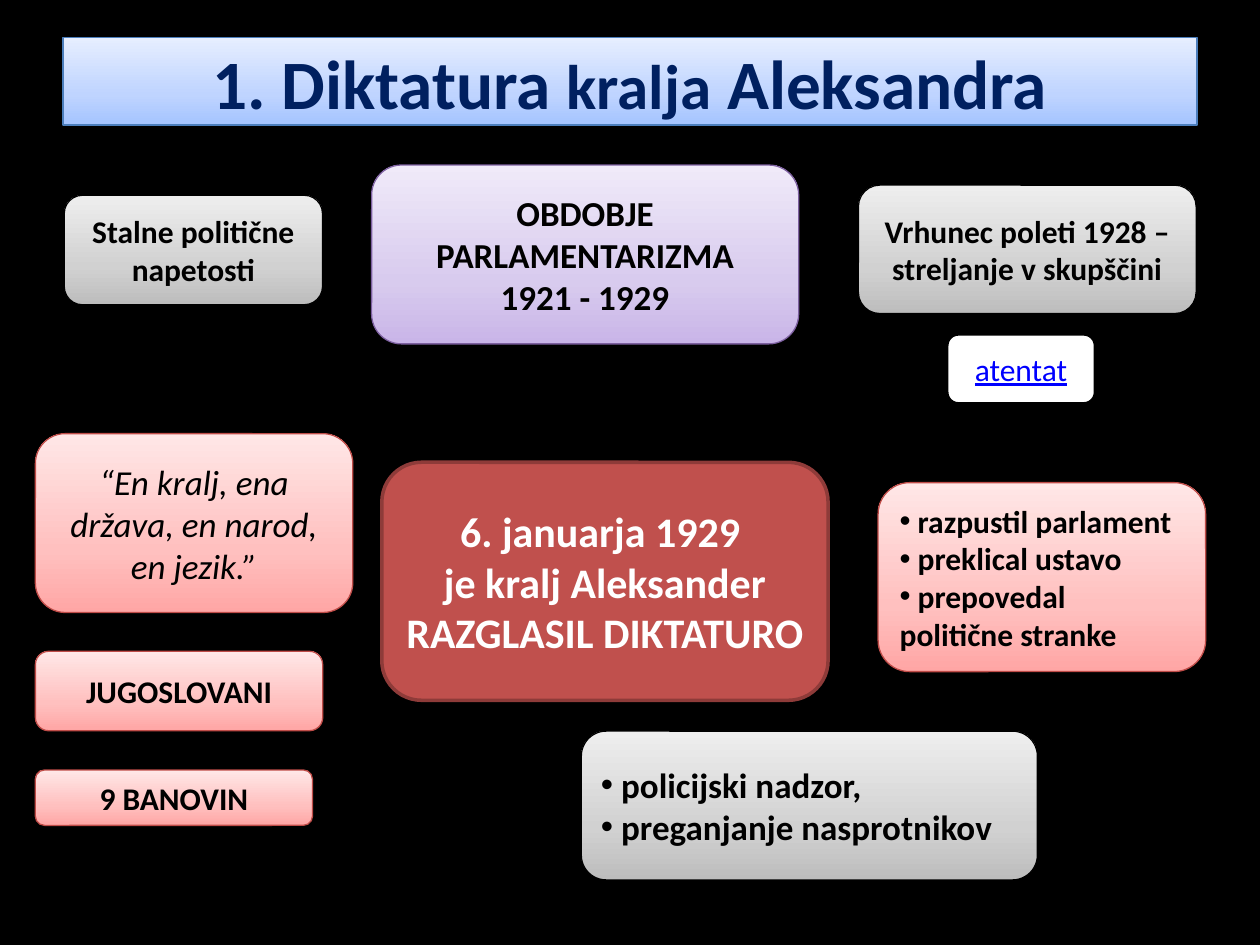
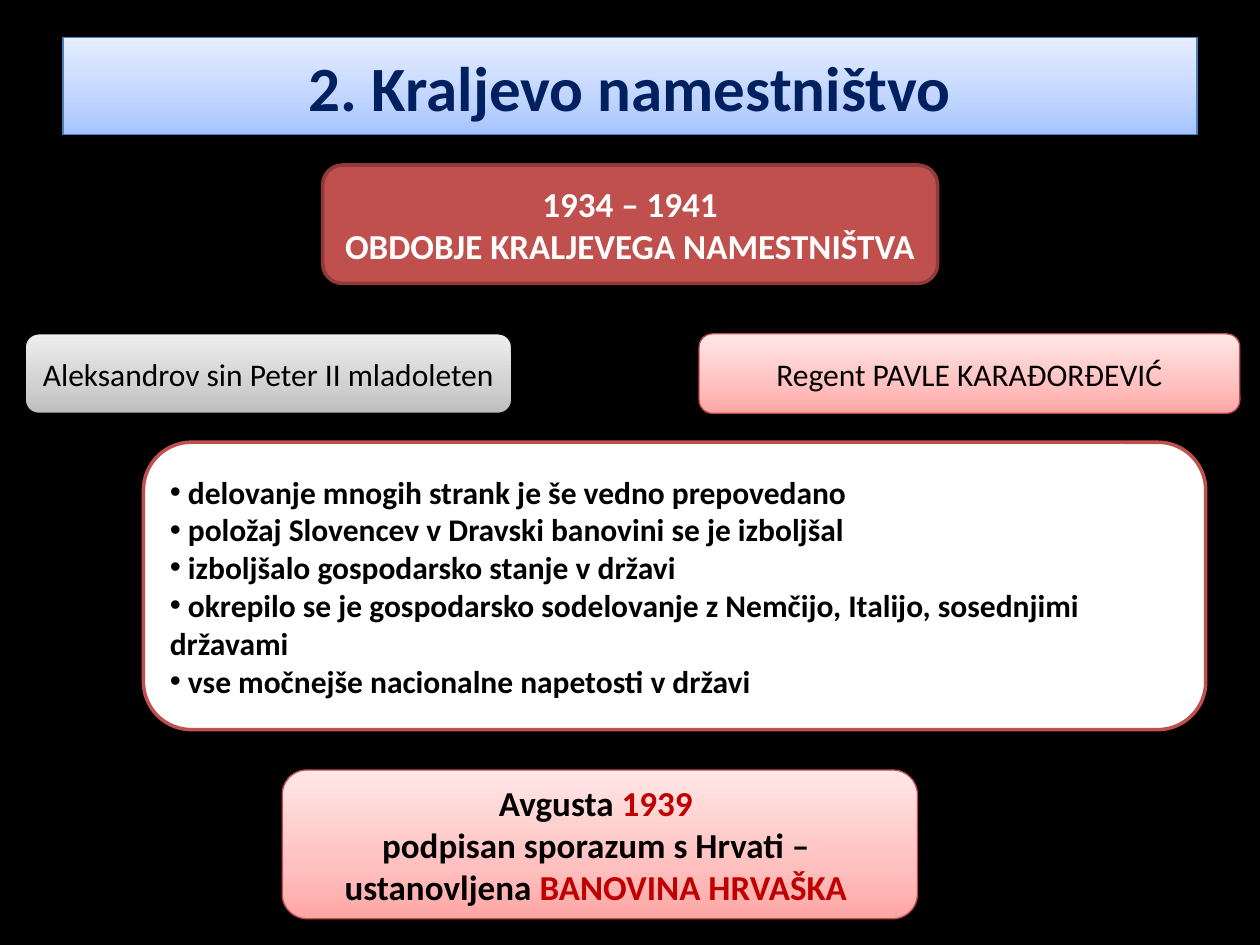
import copy
import collections
import pptx
import pptx.util
import pptx.dml.color
import pptx.enum.shapes
import pptx.enum.text
import pptx.oxml
import pptx.oxml.ns

Pt = pptx.util.Pt
RGB = pptx.dml.color.RGBColor
Kind = pptx.enum.shapes.MSO_SHAPE
Align = pptx.enum.text.PP_ALIGN

# Shared colours and looks
FONT = "Calibri"
BLACK = RGB(0x00, 0x00, 0x00)
WHITE = RGB(0xFF, 0xFF, 0xFF)
NAVY = RGB(0x00, 0x20, 0x60)
LINK = RGB(0x00, 0x00, 0xFF)
RED = RGB(0xC0, 0x50, 0x4D)
ACCENT = RGB(0xC0, 0x00, 0x00)
STOPS = (0, 0.35, 1)

# A look has one fill colour, or three that fade from bottom to top
Look = collections.namedtuple("Look", "fills edge width ink", defaults=[BLACK])
BLUE = Look((RGB(0xA4, 0xC4, 0xFF), RGB(0xBF, 0xD4, 0xFF), RGB(0xE6, 0xEE, 0xFF)),
            RGB(0x4B, 0x7E, 0xBC), 0.75, NAVY)
LILAC = Look((RGB(0xC9, 0xB5, 0xE8), RGB(0xD8, 0xCB, 0xEE), RGB(0xF0, 0xEA, 0xF9)),
             RGB(0x7D, 0x60, 0xA0), 0.75)
GREY = Look((RGB(0xBD, 0xBD, 0xBD), RGB(0xD1, 0xD1, 0xD1), RGB(0xEE, 0xEE, 0xEE)),
            BLACK, 0.75)
PINK = Look((RGB(0xFF, 0xA6, 0xA5), RGB(0xFF, 0xC0, 0xBF), RGB(0xFF, 0xE7, 0xE7)),
            RGB(0xBF, 0x4C, 0x48), 0.75)
BRICK = Look((RED,), RGB(0x8E, 0x3B, 0x39), 2, WHITE)
PLAIN = Look((WHITE,), RED, 2)
LABEL = Look((WHITE,), BLACK, 2, LINK)


def paint(shape, look):
    """Fill and outline a shape."""
    if len(look.fills) == 1:
        shape.fill.solid()
        shape.fill.fore_color.rgb = look.fills[0]
    else:
        shape.fill.gradient()
        shape.fill.gradient_angle = 90
        stops = shape.element.spPr.find(".//" + pptx.oxml.ns.qn("a:gsLst"))
        stops.insert(1, copy.deepcopy(stops[0]))
        for stop, pos, tint in zip(shape.fill.gradient_stops, STOPS, look.fills):
            stop.position = pos
            stop.color.rgb = tint
    shape.line.color.rgb = look.edge
    shape.line.width = Pt(look.width)


def bullet(para):
    """Put a bullet in front of a paragraph, without a hanging indent."""
    props = para._p.get_or_add_pPr()
    props.set("marL", "0")
    props.set("indent", "0")
    space = pptx.oxml.ns.nsdecls("a")
    props.append(pptx.oxml.parse_xml(f'<a:buFont {space} typeface="Arial"/>'))
    props.append(pptx.oxml.parse_xml(f'<a:buChar {space} char="•"/>'))


def write(para, text, size, ink, bold=True):
    """Write a line; every second part between bars is accented."""
    for num, part in enumerate(text.split("|")):
        run = para.add_run()
        run.text = part
        font = run.font
        font.name, font.size, font.bold = FONT, Pt(size), bold
        font.color.rgb = ACCENT if num % 2 else ink


def card(slide, box, look, lines, size=18, bold=True, dots=False):
    """Add a rounded card with one paragraph for each line."""
    shape = slide.shapes.add_shape(Kind.ROUNDED_RECTANGLE, *map(Pt, box))
    shape.shadow.inherit = False
    paint(shape, look)
    frame = shape.text_frame
    frame.word_wrap = True
    for num, line in enumerate(lines):
        para = frame.add_paragraph() if num else frame.paragraphs[0]
        para.alignment = Align.LEFT if dots else Align.CENTER
        if dots:
            bullet(para)
        write(para, line, size, look.ink, bold)
    return shape


def head(slide, box, parts):
    """Format the title band; parts are (text, size) pairs."""
    title = slide.shapes.title
    title.left, title.top, title.width, title.height = map(Pt, box)
    paint(title, BLUE)
    frame = title.text_frame
    frame.auto_size = pptx.enum.text.MSO_AUTO_SIZE.NONE
    frame.vertical_anchor = pptx.enum.text.MSO_ANCHOR.MIDDLE
    para = frame.paragraphs[0]
    para.alignment = Align.CENTER
    for text, size in parts:
        write(para, text, size, NAVY)


# Slide 1: the years of parliament
def era(slide, box):
    x, y, w, h = box
    note = card(slide, (x + 505, y + h - 40, 85, 40), LABEL, ["atentat"], bold=False)
    note.text_frame.paragraphs[0].runs[0].font.underline = True
    card(slide, (x + 176.4, y, 244, 102.2), LILAC,
         ["OBDOBJE PARLAMENTARIZMA", "1921 - 1929"], 20)
    card(slide, (x + 0.7, y + 17.3, 147.6, 62.6), GREY, ["Stalne politične napetosti"])
    card(slide, (x + w - 193.5, y + 11.5, 193, 73.4), GREY,
         ["Vrhunec poleti 1928 – streljanje v skupščini"])


# Slide 1: the dictatorship and what it brought
def rule(slide, box):
    x, y, w, h = box
    card(slide, (x + 198, y + 16.4, 255, 136), BRICK,
         ["6. januarja 1929 ", "je kralj Aleksander", "RAZGLASIL DIKTATURO"], 24)
    card(slide, (x + w - 187.2, y + 28, 187.2, 108), PINK,
         [" razpustil parlament", " preklical ustavo", " prepovedal politične stranke"],
         dots=True)
    quote = card(slide, (x, y, 181.4, 102.2), PINK,
                 ["“En kralj, ena država, en narod, en jezik.”"], 20, False)
    quote.text_frame.paragraphs[0].runs[0].font.italic = True
    card(slide, (x, y + 124.4, 164.2, 45.4), PINK, ["JUGOSLOVANI"])
    card(slide, (x, y + 192.2, 158.4, 31.7), PINK, ["9 BANOVIN"])
    card(slide, (x + 312, y + h - 85, 260.6, 85), GREY,
         [" policijski nadzor,", " preganjanje nasprotnikov"], 20, dots=True)


# Slide 2: the regency and its people
def heirs(slide, box):
    x, y, w, h = box
    card(slide, (x + 170, y, 351.4, 67.7), BRICK,
         ["1934 – 1941", "OBDOBJE KRALJEVEGA NAMESTNIŠTVA"], 20)
    low = y + h - 45.4
    card(slide, (x, low, 278, 45.4), GREY, ["Aleksandrov sin Peter II mladoleten"], bold=False)
    card(slide, (x + w - 309, low, 309, 45.4), PINK, ["Regent PAVLE KARAĐORĐEVIĆ"], bold=False)


# Slide 2: the state of the land
def land(slide, box):
    x, y, w, h = box
    card(slide, (x, y, w, 164.2), PLAIN,
         [" delovanje mnogih strank je še vedno prepovedano",
          " položaj Slovencev v Dravski banovini se je izboljšal",
          " izboljšalo gospodarsko stanje v državi",
          " okrepilo se je gospodarsko sodelovanje z Nemčijo, Italijo, sosednjimi državami",
          " vse močnejše nacionalne napetosti v državi"], dots=True)
    card(slide, (x + 79.3, y + h - 85, 363, 85), PINK,
         ["Avgusta |1939 ", "podpisan sporazum s Hrvati – ",
          "ustanovljena |BANOVINA HRVAŠKA "], 20)


def main():
    deck = pptx.Presentation()
    deck.slide_width, deck.slide_height = Pt(720), Pt(540)
    ground = deck.slide_master.background.fill
    ground.solid()
    ground.fore_color.rgb = BLACK
    base = deck.slide_layouts.get_by_name("Title Only")

    first = deck.slides.add_slide(base)
    head(first, (36, 21.6, 648, 49.9),
         [("1. Diktatura ", 39.6), ("kralja", 36), (" Aleksandra", 39.6)])
    era(first, (36, 94.3, 648, 136.5))
    rule(first, (20.2, 247.8, 668.8, 255))

    second = deck.slides.add_slide(base)
    head(second, (36, 21.6, 648, 55.4), [("2. Kraljevo namestništvo", 36)])
    heirs(second, (14.4, 94.3, 694.1, 141.9))
    land(second, (82, 252.7, 607, 272.3))
    deck.save("out.pptx")


if __name__ == "__main__":
    main()
